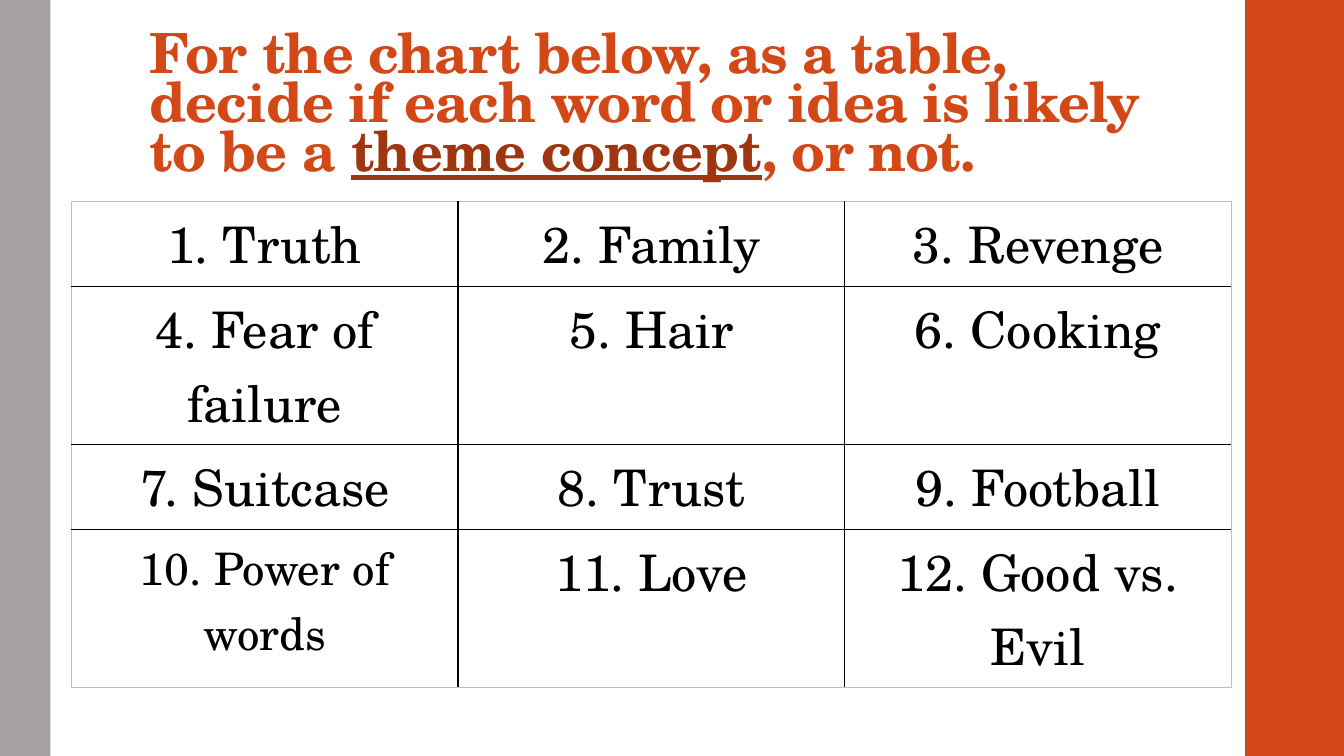
"""Build the theme concept sorting slide."""
from dataclasses import dataclass

from lxml.etree import SubElement
from pptx import Presentation
from pptx.dml.color import RGBColor
from pptx.enum.shapes import MSO_SHAPE as Shape
from pptx.enum.text import MSO_ANCHOR as Anchor, PP_ALIGN as Align
from pptx.oxml.ns import qn
from pptx.util import Inches, Pt

WIDTH, HEIGHT = 13.33, 7.5
FONT = "TeX Gyre Schola"
ORANGE, RUST, GREY = "D34817", "9E3611", "A6A1A1"
BLACK, PALE = "000000", "C0C0C0"
COLUMNS = 3
TABLE_LEFT, TABLE_TOP, TABLE_WIDTH = 0.71, 2, 11.5
SHORT_ROW, TALL_ROW = 0.84, 1.57
ROW_HEIGHTS = (SHORT_ROW, TALL_ROW, SHORT_ROW, TALL_ROW)


@dataclass(frozen=True)
class Band:
    left: float
    width: float
    color: str


@dataclass(frozen=True)
class Idea:
    text: str
    size: float = 36


@dataclass(frozen=True)
class Phrase:
    text: str
    color: str = ORANGE
    underline: bool = False


BANDS = (Band(12.35, WIDTH - 12.35, ORANGE), Band(0, 0.5, GREY))
HEADING = (
    Phrase("For the chart below, as a table, decide if each word or idea is likely to be a "),
    Phrase("theme concept", RUST, True),
    Phrase(", or not."),
)
IDEAS = (
    Idea("Truth"), Idea("Family"), Idea("Revenge"),
    Idea("Fear of failure"), Idea("Hair"), Idea("Cooking"),
    Idea("Suitcase"), Idea("Trust"), Idea("Football"),
    Idea("Power of words", 32), Idea("Love"), Idea("Good vs. Evil"),
)


def paint(color_format, color: str) -> None:
    color_format.rgb = RGBColor.from_string(color)


def add_span(para, text: str, *, size: float, color: str = BLACK, bold: bool = False,
             underline: bool = False, spacing: int = 0) -> None:
    span = para.add_run()
    span.text = text
    font = span.font
    font.name, font.size = FONT, Pt(size)
    font.bold, font.underline = bold, underline
    paint(font.color, color)
    if spacing:
        font._element.set("spc", str(spacing))


def add_band(page, band: Band) -> None:
    box = page.shapes.add_shape(Shape.RECTANGLE, Inches(band.left), 0,
                                Inches(band.width), Inches(HEIGHT))
    box.shadow.inherit = False
    box.fill.solid()
    paint(box.fill.fore_color, band.color)
    box.line.fill.background()


def add_heading(page) -> None:
    box = page.shapes.add_textbox(Inches(1.38), Inches(0.32), Inches(10.6), Inches(1.53))
    frame = box.text_frame
    frame.word_wrap = True
    frame.vertical_anchor = Anchor.BOTTOM
    frame.margin_top, frame.margin_bottom = Inches(0.03), Inches(0.05)
    para = frame.paragraphs[0]
    para.line_spacing = 0.74
    for phrase in HEADING:
        add_span(para, phrase.text, size=39.6, color=phrase.color, bold=True,
                 underline=phrase.underline, spacing=-50)


def add_borders(cell, row: int, column: int) -> None:
    properties = cell._tc.get_or_add_tcPr()
    outer_sides = {
        "a:lnL": column == 0,
        "a:lnR": column == COLUMNS - 1,
        "a:lnT": row == 0,
        "a:lnB": row == len(ROW_HEIGHTS) - 1,
    }
    for side, outer in outer_sides.items():
        line = SubElement(properties, qn(side), w=str(Pt(0.5 if outer else 1)))
        fill = SubElement(line, qn("a:solidFill"))
        SubElement(fill, qn("a:srgbClr"), val=PALE if outer else BLACK)


def add_ideas(page) -> None:
    table = page.shapes.add_table(
        len(ROW_HEIGHTS), COLUMNS, Inches(TABLE_LEFT), Inches(TABLE_TOP),
        Inches(TABLE_WIDTH), Inches(sum(ROW_HEIGHTS))).table
    table.first_row = table.horz_banding = False
    for column in table.columns:
        column.width = Inches(TABLE_WIDTH / COLUMNS)
    for row, height in zip(table.rows, ROW_HEIGHTS):
        row.height = Inches(height)
    for index, idea in enumerate(IDEAS):
        row, column = divmod(index, COLUMNS)
        cell = table.cell(row, column)
        add_borders(cell, row, column)
        cell.fill.background()
        para = cell.text_frame.paragraphs[0]
        para.alignment = Align.CENTER
        add_span(para, f"{index + 1}. {idea.text}", size=idea.size)


def main() -> None:
    deck = Presentation()
    deck.slide_width, deck.slide_height = Inches(WIDTH), Inches(HEIGHT)
    page = deck.slides.add_slide(deck.slide_layouts[6])
    for band in BANDS:
        add_band(page, band)
    add_heading(page)
    add_ideas(page)
    deck.save("out.pptx")


if __name__ == "__main__":
    main()
